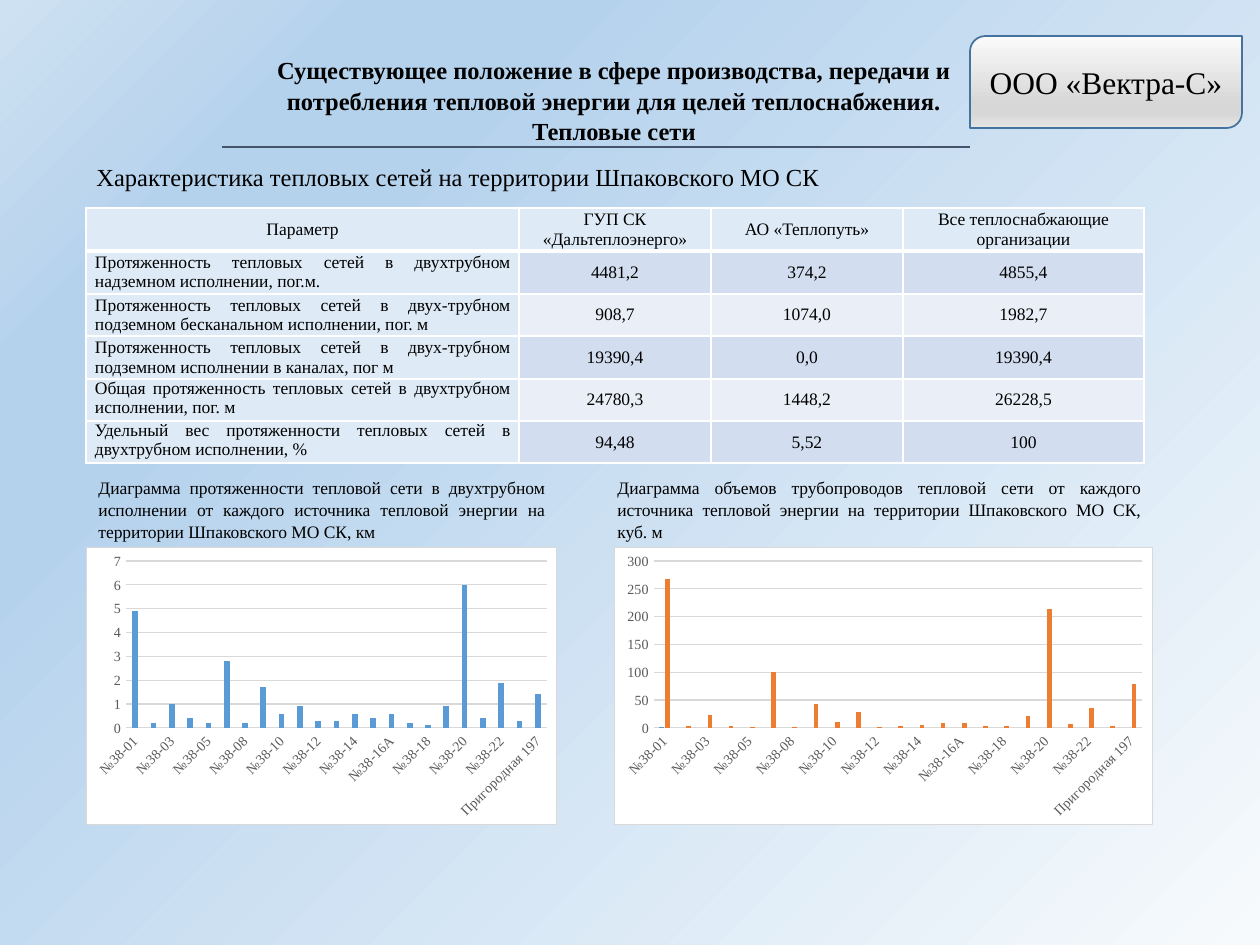
from dataclasses import dataclass
from itertools import product

from lxml import etree
from pptx import Presentation
from pptx.chart.data import CategoryChartData
from pptx.dml.color import RGBColor
from pptx.enum.chart import XL_CHART_TYPE, XL_TICK_MARK
from pptx.enum.shapes import MSO_CONNECTOR, MSO_SHAPE
from pptx.enum.text import MSO_ANCHOR, MSO_AUTO_SIZE, PP_ALIGN
from pptx.oxml import parse_xml
from pptx.oxml.ns import nsdecls, qn
from pptx.util import Emu, Pt

COLUMN = XL_CHART_TYPE.COLUMN_CLUSTERED
NO_TICK = XL_TICK_MARK.NONE
STRAIGHT = MSO_CONNECTOR.STRAIGHT
BADGE = MSO_SHAPE.ROUND_2_DIAG_RECTANGLE
TOP, MIDDLE = MSO_ANCHOR.TOP, MSO_ANCHOR.MIDDLE
FIXED = MSO_AUTO_SIZE.NONE
LEFT, CENTER, JUSTIFY = PP_ALIGN.LEFT, PP_ALIGN.CENTER, PP_ALIGN.JUSTIFY


@dataclass(frozen=True)
class Theme:
    font: str = "Times New Roman"
    ink: str = "000000"
    rule: str = "44546A"
    edge: str = "43739E"
    white: str = "FFFFFF"
    label: str = "DEEBF7"
    bands: tuple = ("EAEFF7", "D2DEEF")
    grid: str = "D9D9D9"
    muted: str = "595959"
    blue: str = "5B9BD5"
    orange: str = "ED7D31"
    sky: tuple = ("F7FAFD", "B5D2EC", "B5D2EC", "CEE1F2")
    steel: tuple = ("FAFAFA", "D7D7D7", "D7D7D7", "E4E4E4")
    stops: tuple = (0, 74, 83, 100)
    head: int = 14
    badge: int = 18
    body: int = 10
    axis: int = 8


def px(*sizes):
    return [Emu(round(size * 914400 / 126)) for size in sizes]


def rgb(code):
    return RGBColor.from_string(code)


def solid(code):
    return f'<a:solidFill><a:srgbClr val="{code}"/></a:solidFill>'


class Deck:
    """Draws themed elements on the current slide."""

    def __init__(self, theme):
        self.theme = theme
        self.file = Presentation()
        self.file.slide_width, self.file.slide_height = px(1260, 945)
        self.slide = self.file.slides.add_slide(self.file.slide_layouts[5])
        self.shapes = self.slide.shapes

    def shade(self, node, codes, course):
        stops = "".join(
            f'<a:gs pos="{pos * 1000}"><a:srgbClr val="{code}"/></a:gs>'
            for pos, code in zip(self.theme.stops, codes))
        old = next(node.iter(qn("a:gradFill")))
        old.getparent().replace(old, parse_xml(
            f'<a:gradFill {nsdecls("a")} rotWithShape="1">'
            f'<a:gsLst>{stops}</a:gsLst>{course}</a:gradFill>'))

    def back(self):
        self.slide.background.fill.gradient()
        self.shade(self.slide.element, self.theme.sky,
                   '<a:path path="circle">'
                   '<a:fillToRect l="100000" t="100000"/></a:path>')

    def style(self, frame, text, size, align, bold=False, space=1.0):
        frame.text = text
        frame.word_wrap = True
        line = frame.paragraphs[0]
        line.alignment, line.line_spacing = align, space
        font = line.runs[0].font
        font.name, font.size, font.bold = self.theme.font, Pt(size), bold
        font.color.rgb = rgb(self.theme.ink)

    def title(self, text, *box):
        shape = self.shapes.title
        shape.left, shape.top, shape.width, shape.height = px(*box)
        frame = shape.text_frame
        self.style(frame, text, self.theme.head, CENTER, True, 1.05)
        frame.auto_size, frame.vertical_anchor = FIXED, TOP

    def text(self, text, size, align, *box):
        frame = self.shapes.add_textbox(*px(*box)).text_frame
        self.style(frame, text, size, align, space=1.05)

    def line(self, *ends):
        line = self.shapes.add_connector(STRAIGHT, *px(*ends))
        line.line.color.rgb, line.line.width = rgb(self.theme.rule), Pt(1.5)
        etree.SubElement(line._element.spPr, qn("a:effectLst"))

    def badge(self, text, *box):
        shape = self.shapes.add_shape(BADGE, *px(*box))
        shape.shadow.inherit = False
        shape.fill.gradient()
        self.shade(shape._element.spPr, self.theme.steel,
                   '<a:lin ang="5400000" scaled="0"/>')
        shape.line.color.rgb, shape.line.width = rgb(self.theme.edge), Pt(1)
        self.style(shape.text_frame, text, self.theme.badge, CENTER)
        shape.text_frame.vertical_anchor = MIDDLE

    def cell(self, cell, text, row, col):
        theme = self.theme
        side = row and not col
        self.style(cell.text_frame, text, theme.body, JUSTIFY if side else CENTER)
        cell.margin_left, cell.margin_right = px(9, 9)
        cell.margin_top = cell.margin_bottom = 0
        cell.vertical_anchor = TOP if side and row > 3 else MIDDLE
        props = cell._tc.get_or_add_tcPr()
        for edge in "LRTB":
            heavy = (row, edge) in ((0, "B"), (1, "T"))
            props.append(parse_xml(
                f'<a:ln{edge} {nsdecls("a")} w="{38100 if heavy else 12700}">'
                f'{solid(theme.white)}</a:ln{edge}>'))
        cell.fill.solid()
        plain = not row or not col
        cell.fill.fore_color.rgb = rgb(theme.label if plain else theme.bands[row % 2])

    def table(self, data, left, top, cols, rows):
        box = px(left, top, sum(cols), sum(rows))
        table = self.shapes.add_table(len(rows), len(cols), *box).table
        table.first_row = table.horz_banding = False
        for col, width in zip(table.columns, px(*cols)):
            col.width = width
        for row, height in zip(table.rows, px(*rows)):
            row.height = height
        for row, col in product(range(len(rows)), range(len(cols))):
            self.cell(table.cell(row, col), data[row][col], row, col)

    def chart(self, cats, series, peak, step, *box):
        theme = self.theme
        data = CategoryChartData()
        data.categories = cats
        for num, (vals, _) in enumerate(series, 1):
            data.add_series(f"Series {num}", vals)
        chart = self.shapes.add_chart(COLUMN, *px(*box), data).chart
        chart.has_legend = chart.has_title = False
        chart.font.name, chart.font.size = theme.font, Pt(theme.body)
        chart._chartSpace.find(qn("c:chart")).addnext(parse_xml(
            f'<c:spPr {nsdecls("c", "a")}>{solid(theme.white)}'
            f'<a:ln w="9525">{solid(theme.grid)}</a:ln></c:spPr>'))
        plot = chart.plots[0]
        plot.gap_width, plot.overlap, plot.vary_by_categories = 219, -27, False
        for item, (_, code) in zip(plot.series, series):
            item.invert_if_negative = False
            item.format.fill.solid()
            item.format.fill.fore_color.rgb = rgb(code)
        cat, val = chart.category_axis, chart.value_axis
        for axis in (cat, val):
            axis.major_tick_mark = axis.minor_tick_mark = NO_TICK
            font = axis.tick_labels.font
            font.name, font.size = theme.font, Pt(theme.axis)
            font.color.rgb = rgb(theme.muted)
        cat._element.find(qn("c:txPr")).find(qn("a:bodyPr")).set("rot", "-2700000")
        val.minimum_scale, val.maximum_scale, val.major_unit = 0, peak, step
        val.format.line.fill.background()
        for part in (cat, val.major_gridlines):
            part.format.line.color.rgb = rgb(theme.grid)
            part.format.line.width = Pt(0.75)


def main():
    theme = Theme()
    deck = Deck(theme)
    deck.back()
    deck.title("Существующее положение в сфере производства, передачи и потребления "
               "тепловой энергии для целей теплоснабжения. Тепловые сети",
               257, 47, 714, 102)
    deck.line(222, 147, 970, 147)
    deck.badge("ООО «Вектра-С»", 970, 36, 272, 92)
    deck.text("Характеристика тепловых сетей на территории Шпаковского МО СК",
              theme.head, LEFT, 84, 154, 1058, 43)
    net = "Протяженность тепловых сетей в "
    deck.table([
        ("Параметр", "ГУП СК «Дальтеплоэнерго»", "АО «Теплопуть»",
         "Все теплоснабжающие организации"),
        (net + "двухтрубном надземном исполнении, пог.м.", "4481,2", "374,2", "4855,4"),
        (net + "двух-трубном подземном бесканальном исполнении, пог. м",
         "908,7", "1074,0", "1982,7"),
        (net + "двух-трубном подземном исполнении в каналах, пог м",
         "19390,4", "0,0", "19390,4"),
        ("Общая протяженность тепловых сетей в двухтрубном исполнении, пог. м",
         "24780,3", "1448,2", "26228,5"),
        ("Удельный вес протяженности тепловых сетей в двухтрубном исполнении, %",
         "94,48", "5,52", "100"),
    ], 86, 208, (433, 192, 192, 241), (43, 43, 42, 43, 42, 42))
    nums = [f"{num:02}" for num in range(1, 24) if num != 6]
    cats = [f"№38-{'16А' if num == '16' else num}" for num in nums]
    cats.append("Пригородная 197")
    length = (4.9, 0.2, 1, 0.4, 0.2, 2.8, 0.2, 1.7, 0.6, 0.9, 0.3, 0.3,
              0.6, 0.4, 0.6, 0.2, 0.1, 0.9, 6, 0.4, 1.9, 0.3, 1.4)
    volume = (267, 3, 23, 4, 2, 101, 2, 42, 10, 28, 2, 3,
              6, 9, 8, 4, 4, 22, 213, 7, 35, 3, 78)
    deck.chart(cats, [(length, theme.blue)], 7, 1, 86, 547, 471, 278)
    deck.text("Диаграмма протяженности тепловой сети в двухтрубном исполнении от каждого "
              "источника тепловой энергии на территории Шпаковского МО СК, км",
              theme.body, JUSTIFY, 86, 470, 471, 77)
    deck.chart(cats, [((1,), theme.blue), (volume, theme.orange)],
               300, 50, 614, 547, 539, 278)
    deck.text("Диаграмма объемов трубопроводов тепловой сети от каждого источника "
              "тепловой энергии на территории Шпаковского МО СК, куб. м",
              theme.body, JUSTIFY, 605, 470, 548, 77)
    deck.file.save("out.pptx")


if __name__ == "__main__":
    main()
